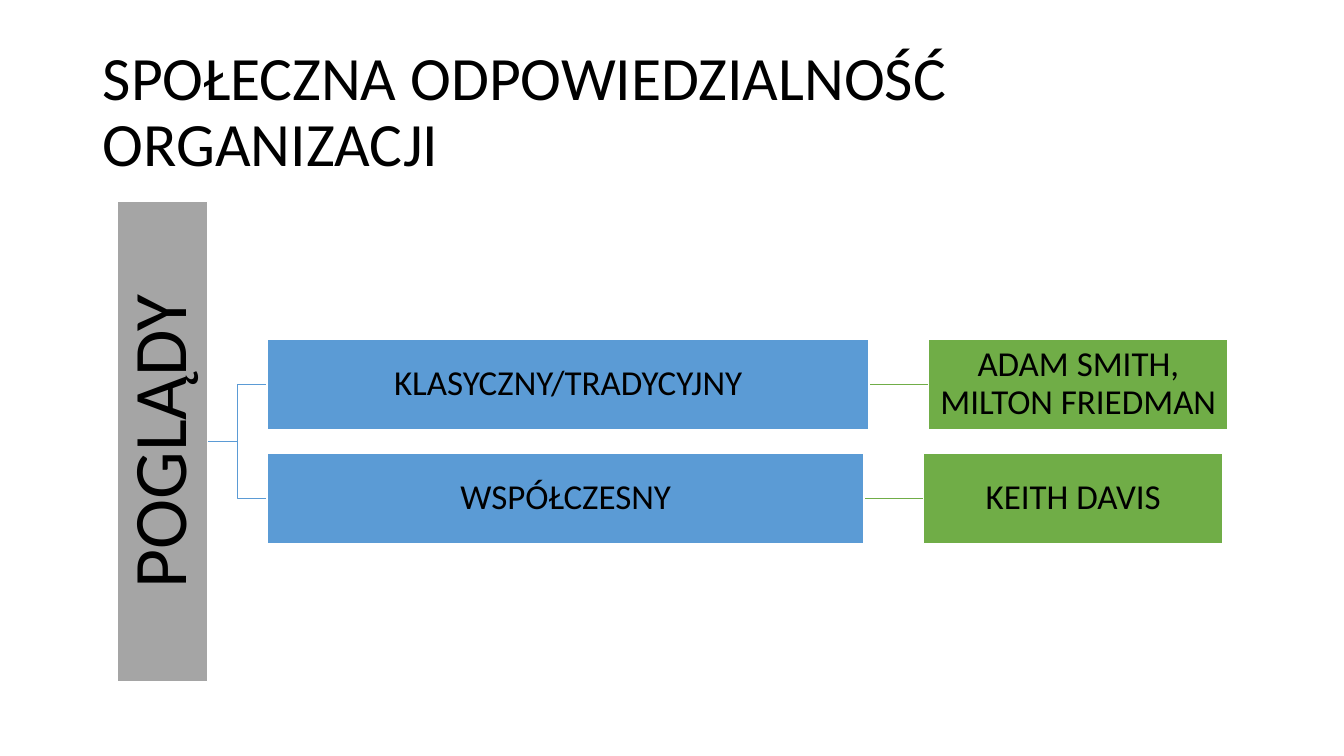
from lxml.etree import SubElement
from pptx import Presentation
from pptx.dml.color import RGBColor as Rgb
from pptx.enum.shapes import MSO_CONNECTOR as Link, MSO_SHAPE as Preset
from pptx.enum.text import MSO_ANCHOR as Anchor, MSO_AUTO_SIZE as AutoSize, PP_ALIGN as Align
from pptx.oxml.ns import qn
from pptx.util import Inches, Pt

COLORS = {"text": "000000", "border": "FFFFFF", "root": "A5A5A5", "view": "5B9BD5", "author": "70AD47"}
ROW_HEIGHT, ROW_STEP, GAP = 0.9, 1.13, 0.59
ROOT_LEFT, ROOT_LENGTH, MIDDLE = 1.16, 4.76, 4.38
ROOT_RIGHT = ROOT_LEFT + ROW_HEIGHT
VIEW_LEFT = ROOT_RIGHT + GAP
AUTHOR_WIDTH = 2.97
ROWS = [
    ("KLASYCZNY/TRADYCYJNY", 5.97, "ADAM SMITH, MILTON FRIEDMAN"),
    ("WSPÓŁCZESNY", 5.92, "KEITH DAVIS"),
]

deck = Presentation()
deck.slide_width, deck.slide_height = Inches(13.33), Inches(7.5)
page = deck.slides.add_slide(deck.slide_layouts[5])


def write(shape, text, size, align=Align.CENTER, inset=None):
    frame = shape.text_frame
    frame.word_wrap = True
    frame.auto_size = AutoSize.NONE
    frame.vertical_anchor = Anchor.MIDDLE
    if inset is not None:
        frame.margin_left = frame.margin_right = Inches(inset)
        frame.margin_top = frame.margin_bottom = Inches(inset)
    para = frame.paragraphs[0]
    para.alignment = align
    para.line_spacing = 0.9
    span = para.add_run()
    span.text = text
    span.font.size = Pt(size)
    span.font.name = "Calibri"
    span.font.color.rgb = Rgb.from_string(COLORS["text"])


title = page.shapes.title
title.left, title.top, title.width, title.height = map(Inches, (0.92, 0.4, 11.5, 1.45))
write(title, "SPOŁECZNA ODPOWIEDZIALNOŚĆ ORGANIZACJI", 44, align=Align.LEFT)

root_center = ROOT_LEFT + ROW_HEIGHT / 2
boxes = [("POGLĄDY", "root", root_center - ROOT_LENGTH / 2, MIDDLE, ROOT_LENGTH, 54, 0.04, 270)]
links = []
for index, (view, view_width, author) in enumerate(ROWS):
    center = MIDDLE + (index - (len(ROWS) - 1) / 2) * ROW_STEP
    view_right = VIEW_LEFT + view_width
    author_left = view_right + GAP
    boxes.append((view, "view", VIEW_LEFT, center, view_width, 25, 0.02, 0))
    boxes.append((author, "author", author_left, center, AUTHOR_WIDTH, 25, 0.02, 0))
    links.append((Link.ELBOW, "view", ROOT_RIGHT, MIDDLE, VIEW_LEFT, center))
    links.append((Link.STRAIGHT, "author", view_right, center, author_left, center))

for kind, color, *ends in links:
    link = page.shapes.add_connector(kind, *map(Inches, ends))
    link.line.color.rgb = Rgb.from_string(COLORS[color])
    link.line.width = Pt(1)
    SubElement(link._element.spPr, qn("a:effectLst"))

for text, color, left, center, width, size, inset, turn in boxes:
    place = map(Inches, (left, center - ROW_HEIGHT / 2, width, ROW_HEIGHT))
    box = page.shapes.add_shape(Preset.RECTANGLE, *place)
    box.rotation = turn
    box.shadow.inherit = False
    box.fill.solid()
    box.fill.fore_color.rgb = Rgb.from_string(COLORS[color])
    box.line.color.rgb = Rgb.from_string(COLORS["border"])
    box.line.width = Pt(1)
    write(box, text, size, inset=inset)

deck.save("out.pptx")
